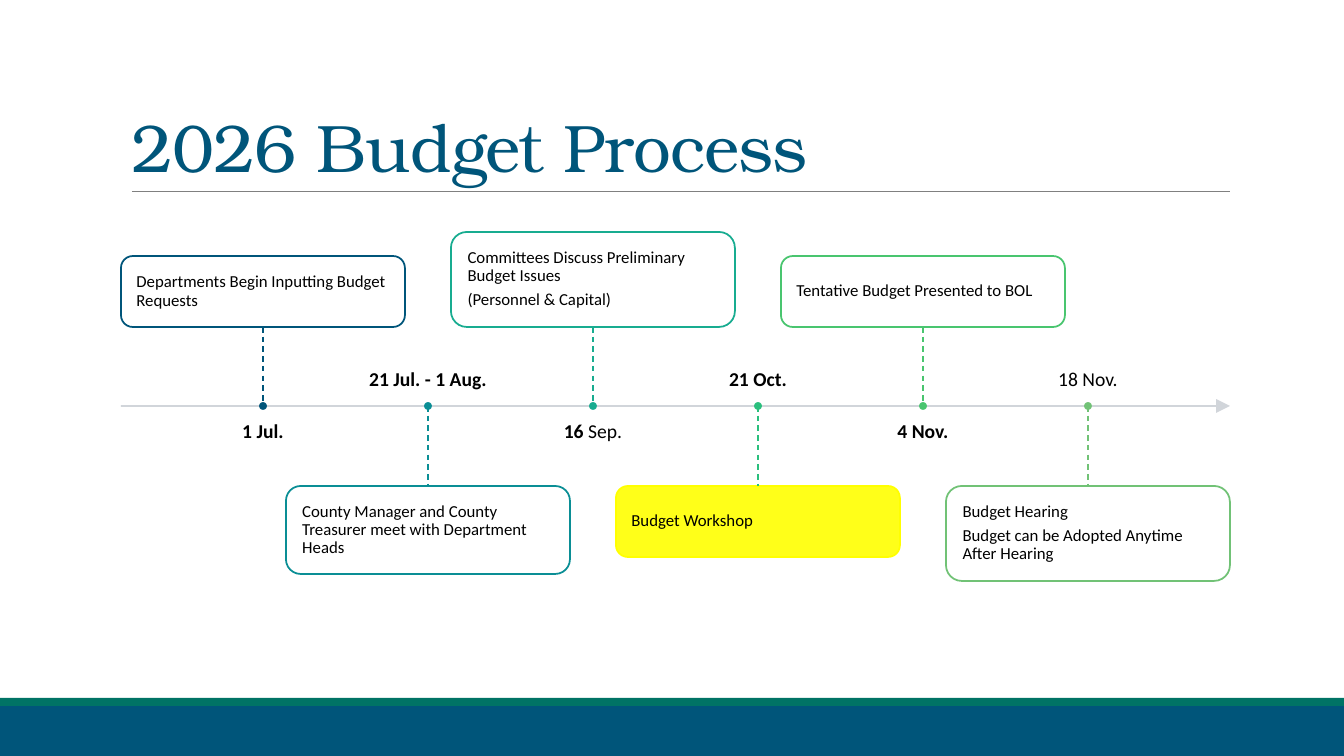
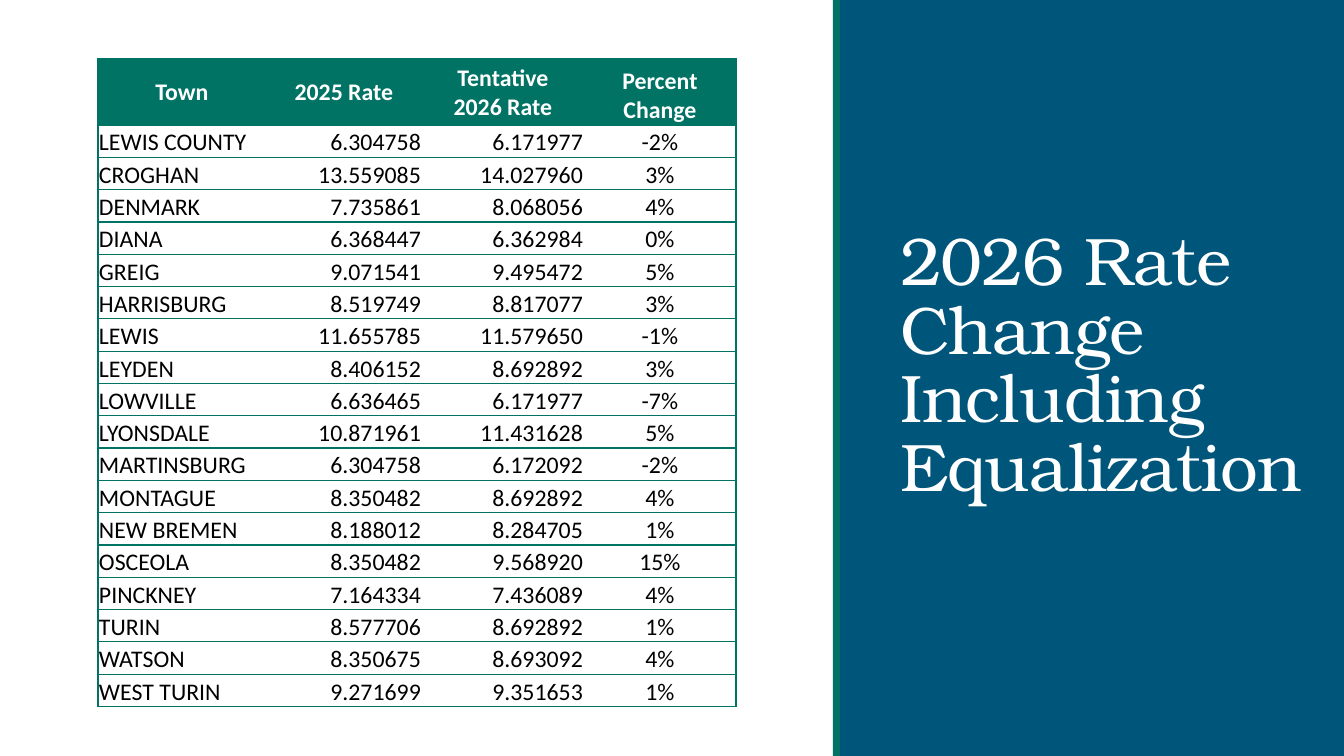
import dataclasses

import pptx
import pptx.dml.color
import pptx.enum.dml
import pptx.enum.shapes
import pptx.enum.text
import pptx.oxml.ns
import pptx.util
from lxml import etree

ALIGN = pptx.enum.text.PP_ALIGN
ANCHOR = pptx.enum.text.MSO_ANCHOR
SHAPE = pptx.enum.shapes.MSO_SHAPE
DASH = pptx.enum.dml.MSO_LINE


@dataclasses.dataclass(frozen=True)
class Theme:
    navy: str = "00557A"
    green: str = "007365"
    white: str = "FFFFFF"
    black: str = "000000"
    rule: str = "808080"
    axis: str = "CCD1D7"
    highlight: str = "FFFF00"
    title_font: str = "TeX Gyre Bonum"
    body_font: str = "Calibri"
    title_size: int = 48
    table_size: int = 17
    date_size: int = 14
    card_size: int = 12


THEME = Theme()
SLIDE_SIZE = (1344, 756)
EMU_PER_PX = 12192000 / SLIDE_SIZE[0]

# Content
PROCESS_TITLE = "2026 Budget Process"
# (bold part of date, plain part of date, card paragraphs, card height, colour)
MILESTONES = [
    ("1 Jul.", "", ["Departments Begin Inputting Budget Requests"], 71, "00557A"),
    ("21 Jul. - 1 Aug.", "",
     ["County Manager and County Treasurer meet with Department Heads"], 88, "0A8E95"),
    ("16 ", "Sep.",
     ["Committees Discuss Preliminary Budget Issues", "(Personnel & Capital)"], 95, "18AC90"),
    ("21 Oct.", "", ["Budget Workshop"], 71, "2ABF7D"),
    ("4 Nov.", "", ["Tentative Budget Presented to BOL"], 71, "49C56F"),
    ("", "18 Nov.",
     ["Budget Hearing", "Budget can be Adopted Anytime After Hearing"], 95, "71C276"),
]
HIGHLIGHTED = "Budget Workshop"

RATES_TITLE = "2026 Rate Change Including Equalization"
RATE_HEADER = [["Town"], ["2025 Rate"], ["Tentative", "2026 Rate"], ["Percent Change"]]
RATES = [
    ("LEWIS COUNTY", "6.304758", "6.171977", "-2%"),
    ("CROGHAN", "13.559085", "14.027960", "3%"),
    ("DENMARK", "7.735861", "8.068056", "4%"),
    ("DIANA", "6.368447", "6.362984", "0%"),
    ("GREIG", "9.071541", "9.495472", "5%"),
    ("HARRISBURG", "8.519749", "8.817077", "3%"),
    ("LEWIS", "11.655785", "11.579650", "-1%"),
    ("LEYDEN", "8.406152", "8.692892", "3%"),
    ("LOWVILLE", "6.636465", "6.171977", "-7%"),
    ("LYONSDALE", "10.871961", "11.431628", "5%"),
    ("MARTINSBURG", "6.304758", "6.172092", "-2%"),
    ("MONTAGUE", "8.350482", "8.692892", "4%"),
    ("NEW BREMEN", "8.188012", "8.284705", "1%"),
    ("OSCEOLA", "8.350482", "9.568920", "15%"),
    ("PINCKNEY", "7.164334", "7.436089", "4%"),
    ("TURIN", "8.577706", "8.692892", "1%"),
    ("WATSON", "8.350675", "8.693092", "4%"),
    ("WEST TURIN", "9.271699", "9.351653", "1%"),
]
RATE_WIDTHS = [168, 156, 162, 152]
RATE_ALIGNS = [ALIGN.LEFT, ALIGN.RIGHT, ALIGN.RIGHT, ALIGN.CENTER]
NO_STYLE = "{2D5ABB26-0587-4C30-8999-92F81FD0307C}"


# Shared helpers
def px(length):
    return pptx.util.Emu(round(length * EMU_PER_PX))


def rgb(color):
    return pptx.dml.color.RGBColor.from_string(color)


def apply(target, **values):
    for name, value in values.items():
        setattr(target, name, value)


def add_child(parent, tag, **attributes):
    child = etree.SubElement(parent, pptx.oxml.ns.qn(tag))
    for name, value in attributes.items():
        child.set(name, str(value))
    return child


def set_opacity(shape, percent):
    color = shape.element.spPr.xpath(".//a:srgbClr")[0]
    add_child(color, "a:alpha", val=percent * 1000)


def write_text(frame, paragraphs, size, color=THEME.black, font=THEME.body_font,
               align=ALIGN.LEFT, spacing=None):
    """Fill a frame; each paragraph is a list of (text, bold) runs."""
    for index, runs in enumerate(paragraphs):
        para = frame.add_paragraph() if index else frame.paragraphs[0]
        apply(para, alignment=align, line_spacing=spacing)
        if index and spacing:
            para.space_before = pptx.util.Pt(4.2)
        for text, bold in runs:
            span = para.add_run()
            span.text = text
            apply(span.font, name=font, size=pptx.util.Pt(size), bold=bold)
            span.font.color.rgb = rgb(color)


def set_frame(frame, anchor, margin):
    apply(frame, word_wrap=True, vertical_anchor=anchor,
          auto_size=pptx.enum.text.MSO_AUTO_SIZE.NONE,
          **{f"margin_{side}": px(margin) for side in ("left", "right", "top", "bottom")})


def add_box(slide, kind, place, fill, line=None):
    box = slide.shapes.add_shape(kind, *map(px, place))
    box.shadow.inherit = False
    box.fill.solid()
    box.fill.fore_color.rgb = rgb(fill)
    if line:
        box.line.color.rgb = rgb(line)
        box.line.width = pptx.util.Pt(1.25)
    else:
        box.line.fill.background()
    return box


def add_line(slide, start, end, color, width, dash=None):
    line = slide.shapes.add_connector(
        pptx.enum.shapes.MSO_CONNECTOR.STRAIGHT, *map(px, start + end))
    line.line.color.rgb = rgb(color)
    apply(line.line, width=pptx.util.Pt(width), dash_style=dash)
    add_child(line.element.spPr, "a:effectLst")
    return line


def add_titled_slide(deck, title, place, color, bands):
    """Add a slide with its coloured bands and, in front of them, its title."""
    slide = deck.slides.add_slide(deck.slide_layouts.get_by_name("Title Only"))
    for band_place, fill in bands:
        add_box(slide, SHAPE.RECTANGLE, band_place, fill)
    holder = slide.shapes.title
    holder.element.getparent().append(holder.element)
    apply(holder, **dict(zip(("left", "top", "width", "height"), map(px, place))))
    frame = holder.text_frame
    set_frame(frame, ANCHOR.BOTTOM, 5)
    apply(frame, margin_left=px(10), margin_right=px(10))
    write_text(frame, [[(title, False)]], THEME.title_size, color, THEME.title_font,
               spacing=0.85)
    for properties in holder.element.xpath(".//a:rPr"):
        properties.set("spc", "-50")
    return slide


# Timeline slide
def build_process(deck):
    slide = add_titled_slide(
        deck, PROCESS_TITLE, (122, 31, 1109, 160), THEME.navy,
        [((0, 706, 1344, 50), THEME.navy), ((0, 698, 1344, 8), THEME.green)])
    add_line(slide, (132, 191), (1230, 191), THEME.rule, 0.5)

    left, right, axis_y = 121, 1230, 406
    upper_edge, lower_edge = 327, 486
    card_width, date_width, date_height, date_gap = 284, 250, 47, 15
    axis = add_line(slide, (left, axis_y), (right, axis_y), THEME.axis, 1.25)
    set_opacity(axis, 90)
    add_child(axis.line._get_or_add_ln(), "a:tailEnd", type="triangle", w="lg", len="lg")

    step = (right - left - card_width) / (len(MILESTONES) - 1)
    for index, (bold, plain, lines, height, color) in enumerate(MILESTONES):
        center = left + card_width / 2 + index * step
        above = index % 2 == 0
        edge = upper_edge if above else lower_edge

        # Card
        marked = HIGHLIGHTED in lines
        card = add_box(slide, SHAPE.ROUNDED_RECTANGLE,
                       (center - card_width / 2, edge - height if above else edge,
                        card_width, height),
                       THEME.highlight if marked else THEME.white,
                       THEME.highlight if marked else color)
        set_opacity(card, 90)
        set_frame(card.text_frame, ANCHOR.MIDDLE, 12)
        write_text(card.text_frame, [[(line, False)] for line in lines],
                   THEME.card_size, spacing=0.9)

        # Stem and dot
        add_line(slide, (center, min(edge, axis_y)), (center, max(edge, axis_y)),
                 color, 1, DASH.DASH)
        add_box(slide, SHAPE.OVAL, (center - 3, axis_y - 3, 6, 6), color, color)

        # Date on the side away from the card
        top = axis_y + date_gap + 1 if above else axis_y - date_gap - date_height
        date = slide.shapes.add_textbox(
            *map(px, (center - date_width / 2, top, date_width, date_height)))
        set_frame(date.text_frame, ANCHOR.TOP if above else ANCHOR.BOTTOM, 0)
        runs = [(text, strong) for text, strong in ((bold, True), (plain, False)) if text]
        write_text(date.text_frame, [runs], THEME.date_size,
                   align=ALIGN.CENTER, spacing=0.9)


# Table slide
def add_borders(cell, tags):
    properties = cell._tc.get_or_add_tcPr()
    for tag in tags:
        border = add_child(properties, tag, w=pptx.util.Pt(1))
        add_child(add_child(border, "a:solidFill"), "a:srgbClr", val=THEME.green)


def build_rates(deck):
    slide = add_titled_slide(
        deck, RATES_TITLE, (890, 187, 430, 323), THEME.white,
        [((840, 0, 504, 756), THEME.navy), ((833, 0, 7, 756), THEME.green)])

    height, header_height = 648, 66
    rows = [RATE_HEADER] + [[[value] for value in row] for row in RATES]
    frame = slide.shapes.add_table(
        len(rows), len(RATE_WIDTHS), *map(px, (98, 59, sum(RATE_WIDTHS), height)))
    frame.element.xpath(".//a:tableStyleId")[0].text = NO_STYLE
    table = frame.table
    table.horz_banding = False
    for column, width in zip(table.columns, RATE_WIDTHS):
        column.width = px(width)

    last = len(RATE_WIDTHS) - 1
    row_height = (height - header_height) / len(RATES)
    for row_index, row in enumerate(rows):
        header = row_index == 0
        table.rows[row_index].height = px(header_height if header else row_height)
        for column_index, lines in enumerate(row):
            cell = table.cell(row_index, column_index)
            sides = [("a:lnL", column_index == 0), ("a:lnR", column_index == last),
                     ("a:lnT", True), ("a:lnB", True)]
            add_borders(cell, [tag for tag, drawn in sides if drawn])
            cell.fill.solid()
            cell.fill.fore_color.rgb = rgb(THEME.green if header else THEME.white)
            middle = header and column_index < last
            apply(cell, margin_left=px(1), margin_right=px(1), margin_top=px(1),
                  margin_bottom=0,
                  vertical_anchor=ANCHOR.MIDDLE if middle else ANCHOR.BOTTOM)
            write_text(cell.text_frame, [[(line, header)] for line in lines],
                       THEME.table_size, THEME.white if header else THEME.black,
                       align=ALIGN.CENTER if header else RATE_ALIGNS[column_index])


def main():
    deck = pptx.Presentation()
    apply(deck, slide_width=px(SLIDE_SIZE[0]), slide_height=px(SLIDE_SIZE[1]))
    build_process(deck)
    build_rates(deck)
    deck.save("out.pptx")


if __name__ == "__main__":
    main()
